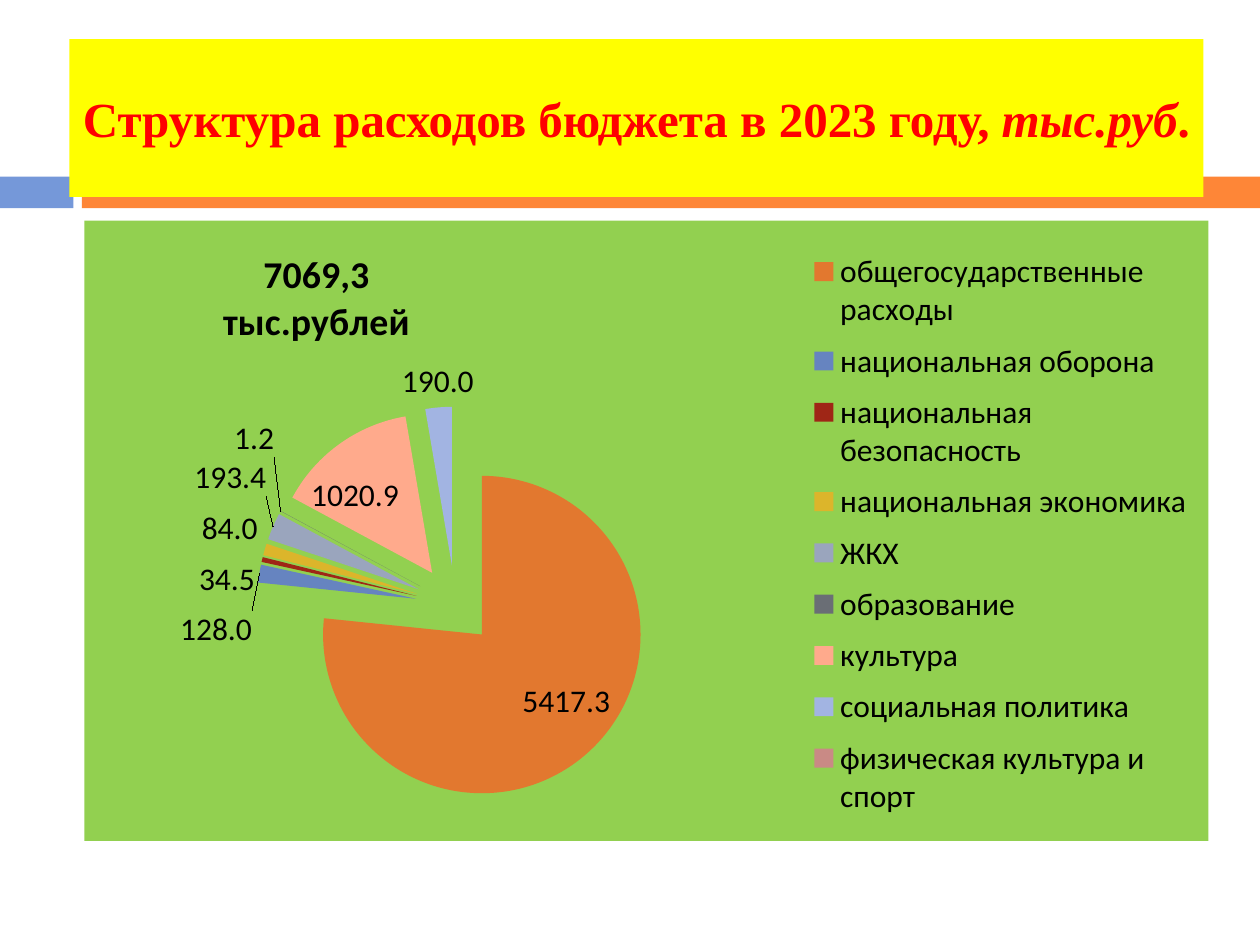
from dataclasses import dataclass

from lxml.etree import SubElement
from pptx import Presentation
from pptx.chart.data import CategoryChartData as Data
from pptx.dml.color import RGBColor as Rgb
from pptx.enum.chart import XL_CHART_TYPE as Kind, XL_LABEL_POSITION as Spot
from pptx.enum.chart import XL_LEGEND_POSITION as Side
from pptx.enum.shapes import MSO_SHAPE as Form
from pptx.enum.text import MSO_ANCHOR as Anchor, PP_ALIGN as Align
from pptx.oxml.ns import qn
from pptx.util import Cm, Pt


@dataclass(frozen=True)
class Theme:
    blue: str = "7598D9"
    orange: str = "FE8637"
    yellow: str = "FFFF00"
    red: str = "FF0000"
    green: str = "92D050"
    black: str = "000000"
    serif: str = "Times New Roman"
    sans: str = "Calibri"
    head: int = 28
    total: float = 21.6
    body: int = 18


THEME = Theme()

# Category, value, slice colour
COSTS = [
    ("общегосударственные расходы", 5417.3, "E2782F"),
    ("национальная оборона", 128.0, "6684C0"),
    ("национальная безопасность", 34.5, "9F2616"),
    ("национальная экономика", 84.0, "DCB52B"),
    ("ЖКХ", 193.4, "9AA5BD"),
    ("образование", 1.2, "6A6E75"),
    ("культура", 1020.9, "FFAA8C"),
    ("социальная политика", 190.0, "A2B4E2"),
    ("физическая культура и спорт", 0, "C98A85"),
]


def paint(fill, color):
    fill.solid()
    fill.fore_color.rgb = Rgb.from_string(color)


def style(font, name, size, color, bold=False):
    font.name, font.size, font.bold = name, Pt(size), bold
    font.color.rgb = Rgb.from_string(color)


def add_rect(slide, box, color):
    rect = slide.shapes.add_shape(Form.RECTANGLE, *map(Cm, box))
    rect.shadow.inherit = False
    paint(rect.fill, color)
    rect.line.fill.background()
    return rect


def add_band(slide, box):
    """Split the strip into a short blue part and a long orange part."""
    left, top, width, height = box
    short, gap = 1.48, 0.17
    start = short + gap
    add_rect(slide, (left, top, short, height), THEME.blue)
    add_rect(slide, (left + start, top, width - start, height), THEME.orange)


def add_head(slide, box):
    frame = add_rect(slide, box, THEME.yellow).text_frame
    frame.word_wrap = False
    frame.vertical_anchor = Anchor.MIDDLE
    para = frame.paragraphs[0]
    para.alignment = Align.CENTER
    for text, slant in (("Структура расходов бюджета в 2023 году, ", False),
                        ("тыс.руб", True), (".", False)):
        run = para.add_run()
        run.text = text
        style(run.font, THEME.serif, THEME.head, THEME.red, True)
        run.font.italic = slant


def place(part, x, y, w=None, h=None, inner=False):
    """Fix a chart part at fractions of the chart's size."""
    for old in part.findall(qn("c:layout")):
        part.remove(old)
    layout = SubElement(part, qn("c:layout"))
    manual = SubElement(layout, qn("c:manualLayout"))
    rules = [("layoutTarget", "inner")] if inner else []
    rules += [("xMode", "edge"), ("yMode", "edge"),
              ("x", x), ("y", y), ("w", w), ("h", h)]
    for tag, val in rules:
        if val is not None:
            SubElement(manual, qn("c:" + tag)).set("val", str(val))
    # The schema puts the layout after the title text or legend position
    before = [qn("c:" + tag) for tag in ("tx", "legendPos")]
    part.insert(sum(kid.tag in before for kid in part), layout)


def add_total(chart):
    chart.has_title = True
    title = chart.chart_title
    frame = title.text_frame
    frame.text = "7069,3\nтыс.рублей"
    for para in frame.paragraphs:
        para.alignment = Align.CENTER
        for run in para.runs:
            style(run.font, THEME.sans, THEME.total, THEME.black, True)
    place(title._element, 0.12, 0.04)


def add_key(chart):
    chart.has_legend = True
    key = chart.legend
    key.position = Side.RIGHT
    key.include_in_layout = False
    style(key.font, THEME.sans, THEME.body, THEME.black)
    place(key._element, 0.64, 0.03, 0.35, 0.95)


def add_pie(slide, box):
    data = Data(number_format="0.0")
    data.categories = [name for name, _, _ in COSTS]
    data.add_series("Series 1", [val for _, val, _ in COSTS])
    chart = slide.shapes.add_chart(Kind.PIE, *map(Cm, box), data).chart
    style(chart.font, THEME.sans, THEME.body, THEME.black)
    add_total(chart)
    add_key(chart)

    plot = chart.plots[0]
    plot.vary_by_categories = True
    series = plot.series[0]
    for i, (_, _, color) in enumerate(COSTS):
        paint(series.points[i].format.fill, color)
    burst = SubElement(series._element, qn("c:explosion"))
    burst.set("val", "25")
    series._element.find(qn("c:dPt")).addprevious(burst)

    labels = series.data_labels
    labels.show_value = True
    labels.number_format = "0.0;;"
    labels.number_format_is_linked = False
    labels.position = Spot.BEST_FIT
    style(labels.font, THEME.sans, THEME.body, THEME.black)

    space = chart._chartSpace
    area = space.find(qn("c:chart")).find(qn("c:plotArea"))
    place(area, 0.15, 0.3, 0.36, 0.64, inner=True)
    back = SubElement(space, qn("c:spPr"))
    fill = SubElement(back, qn("a:solidFill"))
    SubElement(fill, qn("a:srgbClr")).set("val", THEME.green)
    edge = SubElement(back, qn("a:ln"))
    SubElement(edge, qn("a:noFill"))
    space.find(qn("c:chart")).addnext(back)


def main():
    deck = Presentation()
    deck.slide_width, deck.slide_height = Cm(25.4), Cm(19.05)
    slide = deck.slides.add_slide(deck.slide_layouts[6])
    add_band(slide, (0, 3.56, 25.4, 0.64))
    add_head(slide, (1.4, 0.79, 22.86, 3.18))
    add_pie(slide, (1.7, 4.45, 22.66, 12.5))
    deck.save("out.pptx")


if __name__ == "__main__":
    main()
